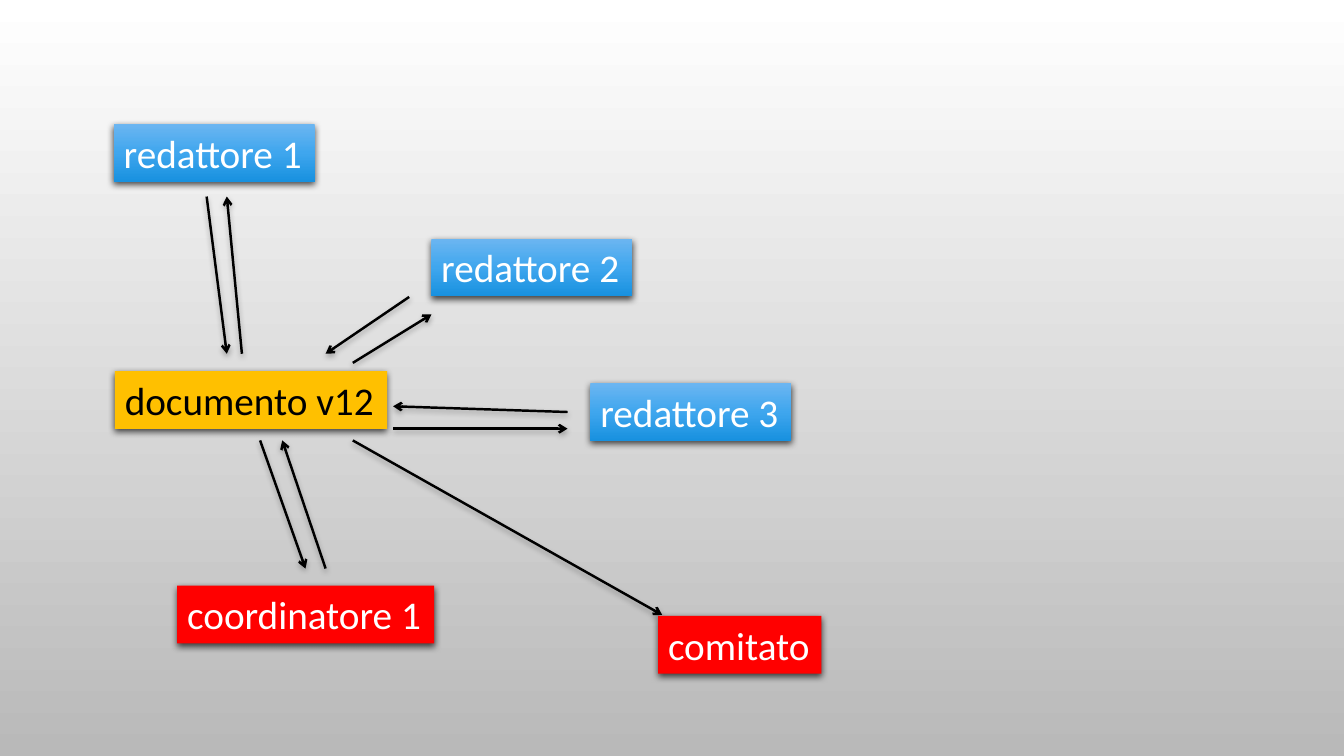
from lxml import etree
from pptx import Presentation
from pptx.dml.color import RGBColor
from pptx.enum.shapes import MSO_CONNECTOR, MSO_SHAPE
from pptx.enum.text import MSO_ANCHOR, MSO_AUTO_SIZE, PP_ALIGN
from pptx.oxml.ns import qn
from pptx.util import Pt

RECT = MSO_SHAPE.RECTANGLE
LINE = MSO_CONNECTOR.STRAIGHT
LEFT = PP_ALIGN.LEFT
TOP = MSO_ANCHOR.TOP
GROW = MSO_AUTO_SIZE.SHAPE_TO_FIT_TEXT

WHITE = RGBColor(0xFF, 0xFF, 0xFF)
BLACK = RGBColor(0, 0, 0)
RED = RGBColor(0xFF, 0, 0)
AMBER = RGBColor(0xFF, 0xC0, 0)
GREY = RGBColor(0xB9, 0xB9, 0xB9)
SKY = RGBColor(0x6C, 0xB6, 0xF1)
BLUE = RGBColor(0x3F, 0xA6, 0xEE)
DEEP = RGBColor(0x18, 0x91, 0xDF)

PAGE = (WHITE, GREY)
BLUES = (SKY, BLUE, DEEP)
HIGH = 41.2

BOXES = [
    ("redattore 1", 81.3, 88.5, 143.5, BLUES, WHITE),
    ("redattore 3", 421.8, 273.6, 143.5, BLUES, WHITE),
    ("coordinatore 1", 126.6, 418.3, 183.6, RED, WHITE),
    ("redattore 2", 308.1, 170.6, 143.5, BLUES, WHITE),
    ("documento v12", 82.1, 265.1, 194.4, AMBER, BLACK),
    ("comitato", 470.1, 440, 116.6, RED, WHITE),
]

ARROWS = [
    ((147.6, 140.4), (162, 252.7)),
    ((172.8, 252.7), (162, 140.4)),
    ((292.3, 212.1), (232.6, 252.7)),
    ((405.4, 294.3), (280.8, 290.2)),
    ((232.6, 406.1), (201.6, 314.6)),
    ((185.8, 314.6), (218.2, 406.1)),
    ((280.8, 306.2), (405.4, 306.2)),
    ((252, 259.2), (308.2, 224.6)),
    ((252, 314.6), (473, 439.2)),
]


def blend(fill, root, tones):
    fill.gradient()
    fill.gradient_angle = 270
    stops = root.find(".//" + qn("a:gsLst"))
    for stop in list(stops):
        stops.remove(stop)
    for i, tone in enumerate(tones):
        pos = i * 100000 // (len(tones) - 1)
        stop = etree.SubElement(stops, qn("a:gs"), pos=str(pos))
        etree.SubElement(stop, qn("a:srgbClr"), val=str(tone))


def shade(props, blur, alpha):
    effects = etree.SubElement(props, qn("a:effectLst"))
    cast = etree.SubElement(
        effects, qn("a:outerShdw"), blurRad=str(Pt(blur)),
        dist=str(Pt(2)), dir="5400000", rotWithShape="0")
    tone = etree.SubElement(cast, qn("a:srgbClr"), val=str(BLACK))
    etree.SubElement(tone, qn("a:alpha"), val=str(alpha * 1000))


def add_box(slide, label, x, y, width, paint, ink):
    box = slide.shapes.add_shape(RECT, Pt(x), Pt(y), Pt(width), Pt(HIGH))
    if paint == BLUES:
        blend(box.fill, box._element, paint)
    else:
        box.fill.solid()
        box.fill.fore_color.rgb = paint
    box.line.fill.background()
    shade(box._element.spPr, 5, 69)
    frame = box.text_frame
    frame.text = label
    frame.word_wrap = False
    frame.auto_size = GROW
    frame.vertical_anchor = TOP
    para = frame.paragraphs[0]
    para.alignment = LEFT
    font = para.runs[0].font
    font.name = "Calibri"
    font.size = Pt(28)
    font.color.rgb = ink


def add_arrow(slide, start, end):
    ends = [Pt(v) for v in start + end]
    arrow = slide.shapes.add_connector(LINE, *ends)
    arrow.line.color.rgb = BLACK
    arrow.line.width = Pt(1.75)
    props = arrow._element.spPr
    etree.SubElement(props.find(qn("a:ln")), qn("a:tailEnd"), type="arrow")
    shade(props, 4, 28)


def main():
    deck = Presentation()
    deck.slide_width = Pt(960)
    deck.slide_height = Pt(540)
    slide = deck.slides.add_slide(deck.slide_layouts[6])
    blend(slide.background.fill, slide._element, PAGE)
    for box in BOXES[:-1]:
        add_box(slide, *box)
    for start, end in ARROWS:
        add_arrow(slide, start, end)
    add_box(slide, *BOXES[-1])
    deck.save("out.pptx")


if __name__ == "__main__":
    main()
